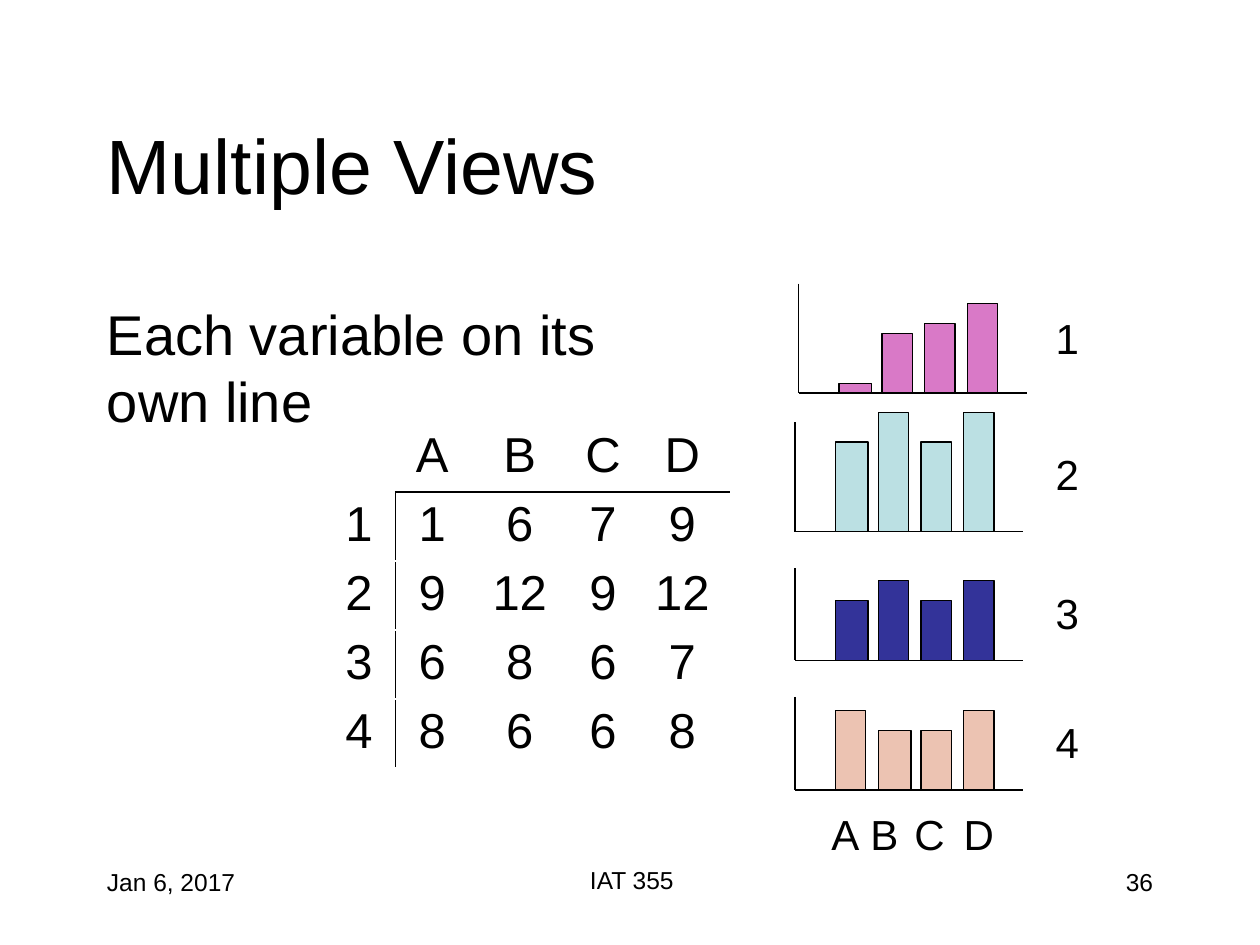
import pptx
import pptx.dml.color
import pptx.enum.shapes
import pptx.enum.text
import pptx.oxml
import pptx.oxml.ns
import pptx.util

Inches = pptx.util.Inches
Pt = pptx.util.Pt
Align = pptx.enum.text.PP_ALIGN
Anchor = pptx.enum.text.MSO_ANCHOR

COLORS = {
    "ink": "000000",
    "pink": "D979C7",
    "aqua": "BBE0E3",
    "navy": "333399",
    "peach": "ECC3B2",
}
FONT = "Arial"
UNIT = 0.079
BAR_OFFSETS = (0.32, 0.66, 1.0, 1.34)


def color(name):
    return pptx.dml.color.RGBColor.from_string(COLORS[name])


def write_text(frame, text, size=24, align=Align.LEFT, ink="ink"):
    paragraph = frame.paragraphs[0]
    paragraph.alignment = align
    run = paragraph.add_run()
    run.text = text
    run.font.name = FONT
    run.font.size = Pt(size)
    run.font.color.rgb = color(ink)


class SlideBuilder:
    def __init__(self, slide, line_width=0.75):
        self.slide = slide
        self.line_width = Pt(line_width)

    def text(self, text, left, top, width, height, wrap=True, anchor=Anchor.TOP, **style):
        box = self.slide.shapes.add_textbox(*map(Inches, (left, top, width, height)))
        box.text_frame.word_wrap = wrap
        box.text_frame.vertical_anchor = anchor
        write_text(box.text_frame, text, **style)

    def line(self, *ends):
        axis = self.slide.shapes.add_connector(
            pptx.enum.shapes.MSO_CONNECTOR.STRAIGHT, *map(Inches, ends))
        axis.line.color.rgb = color("ink")
        axis.line.width = self.line_width
        properties = axis._element.spPr
        properties.append(properties.makeelement(pptx.oxml.ns.qn("a:effectLst"), {}))

    def bar(self, left, base, width, height, fill):
        bar = self.slide.shapes.add_shape(
            pptx.enum.shapes.MSO_SHAPE.RECTANGLE,
            *map(Inches, (left, base - height, width, height)))
        bar.shadow.inherit = False
        bar.fill.solid()
        bar.fill.fore_color.rgb = color(fill)
        bar.line.color.rgb = color("ink")
        bar.line.width = self.line_width

    def bar_view(self, values, fill, left, base, axis_height, wide_bar=0):
        self.line(left, base - axis_height, left, base)
        self.line(left, base, left + 1.81, base)
        for index, (offset, value) in enumerate(zip(BAR_OFFSETS, values)):
            width = 0.26 if index == wide_bar else 0.24
            self.bar(left + offset, base, width, value * UNIT, fill)

    def border(self, cell, *sides):
        properties = cell._tc.get_or_add_tcPr()
        for position, side in enumerate(sides):
            properties.insert(position, pptx.oxml.parse_xml(
                f'<a:ln{side} {pptx.oxml.ns.nsdecls("a")} w="12700"><a:solidFill>'
                f'<a:srgbClr val="{COLORS["ink"]}"/></a:solidFill></a:ln{side}>'))

    def table(self, rows, left, top, column_widths, row_height):
        table = self.slide.shapes.add_table(
            len(rows), len(column_widths), Inches(left), Inches(top),
            Inches(sum(column_widths)), Inches(row_height * len(rows))).table
        table.first_row = table.horz_banding = False
        for column, width in zip(table.columns, column_widths):
            column.width = Inches(width)
        for r, row in enumerate(rows):
            table.rows[r].height = Inches(row_height)
            for c, value in enumerate(row):
                cell = table.cell(r, c)
                cell.fill.background()
                cell.margin_top = cell.margin_bottom = Inches(0.04)
                write_text(cell.text_frame, value, size=28,
                           align=Align.CENTER if c else Align.LEFT)
                sides = (("L", r and c == 1), ("R", r and c == 0),
                         ("T", c and r == 1), ("B", c and r == 0))
                self.border(cell, *(side for side, drawn in sides if drawn))


def main():
    deck = pptx.Presentation()
    deck.slide_width, deck.slide_height = Inches(10), Inches(7.5)
    builder = SlideBuilder(deck.slides.add_slide(deck.slide_layouts[6]))

    builder.text("Jan 6, 2017", 0.75, 6.83, 2.08, 0.5, size=14)
    builder.text("IAT 355", 3.43, 6.82, 3.17, 0.5, size=14, align=Align.CENTER)
    builder.text("36", 7.17, 6.83, 2.08, 0.5, size=14, align=Align.RIGHT)
    builder.text("Multiple Views", 0.75, 0.67, 8.5, 1.25, size=44, anchor=Anchor.MIDDLE)

    builder.bar_view((9, 12, 9, 12), "aqua", 6.31, 4.22, 0.87)
    builder.bar_view((6, 8, 6, 8), "navy", 6.31, 5.24, 0.73)
    builder.bar_view((8, 6, 6, 8), "peach", 6.31, 6.27, 0.74, wide_bar=1)
    builder.bar_view((1, 6, 7, 9), "pink", 6.34, 3.12, 0.87)

    builder.table(
        [("", "A", "B", "C", "D"),
         ("1", "1", "6", "7", "9"),
         ("2", "9", "12", "9", "12"),
         ("3", "6", "8", "6", "7"),
         ("4", "8", "6", "6", "8")],
        2.64, 3.36, (0.5, 0.58, 0.81, 0.51, 0.75), 0.53)

    for view, top in zip("1234", (2.43, 3.51, 4.61, 5.64)):
        builder.text(view, 8.28, top, 0.39, 0.5, wrap=False)
    for variable, left in zip("ABCD", (6.5, 6.81, 7.16, 7.55)):
        builder.text(variable, left, 6.37, 0.43, 0.5, wrap=False)
    builder.text("Each variable on its own line", 0.75, 2.33, 4.65, 1.17, size=32)

    deck.save("out.pptx")


if __name__ == "__main__":
    main()
